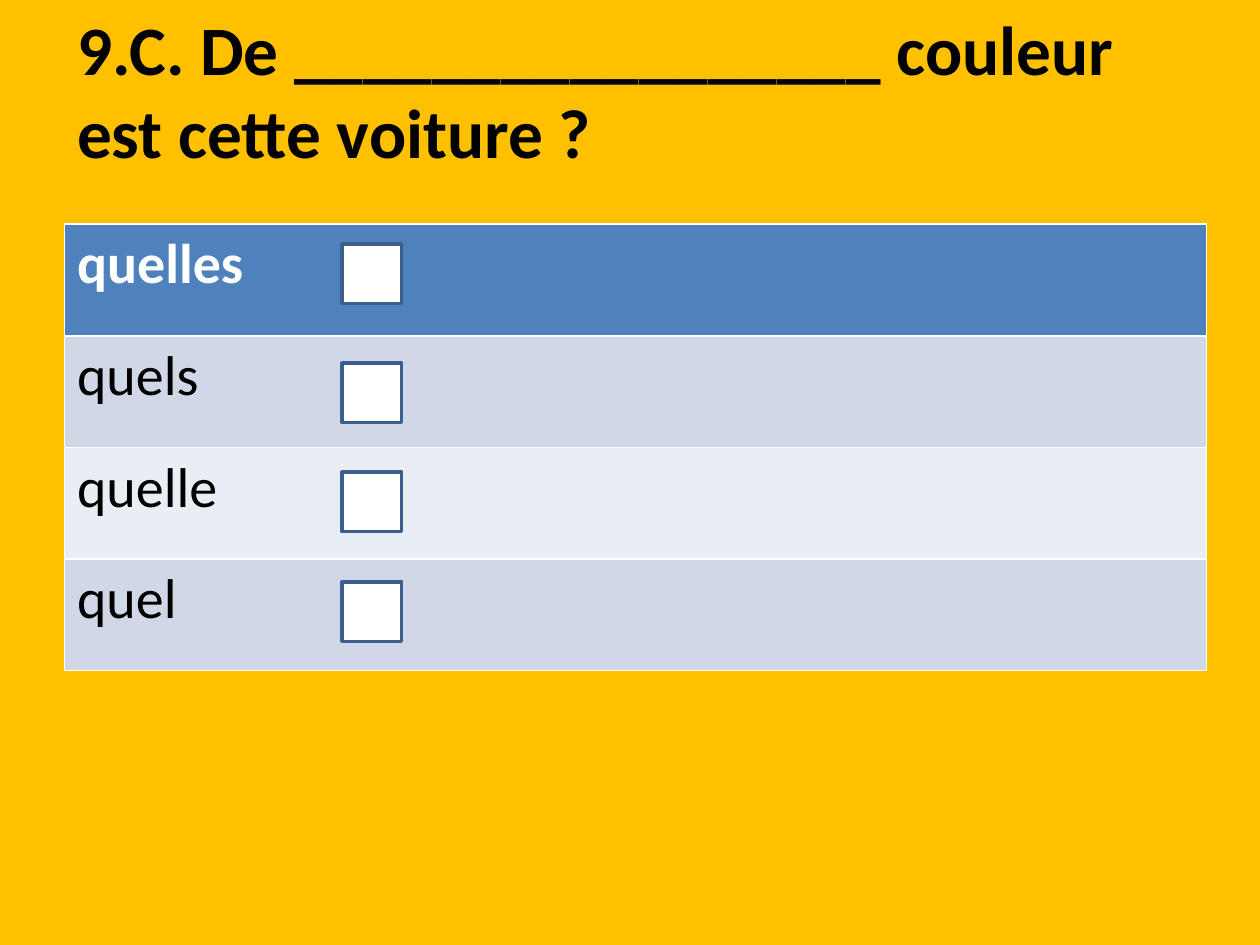
from pptx import Presentation
from pptx.dml.color import RGBColor
from pptx.enum.shapes import MSO_SHAPE
from pptx.enum.text import MSO_ANCHOR, MSO_AUTO_SIZE, PP_ALIGN
from pptx.util import Cm, Pt

RECTANGLE = MSO_SHAPE.RECTANGLE
MIDDLE = MSO_ANCHOR.MIDDLE
NO_AUTOFIT = MSO_AUTO_SIZE.NONE
LEFT = PP_ALIGN.LEFT

AMBER = RGBColor(0xFF, 0xC0, 0x00)
BLACK = RGBColor(0x00, 0x00, 0x00)
WHITE = RGBColor(0xFF, 0xFF, 0xFF)
HEADER_BLUE = RGBColor(0x4F, 0x81, 0xBD)
DARK_BAND = RGBColor(0xD0, 0xD8, 0xE8)
LIGHT_BAND = RGBColor(0xE9, 0xED, 0xF4)
BOX_BORDER = RGBColor(0x3A, 0x5F, 0x8C)


def format_font(font, color, **values):
    font.color.rgb = color
    for name, value in values.items():
        setattr(font, name, value)


presentation = Presentation()
presentation.slide_width = Cm(25.4)
presentation.slide_height = Cm(19.05)
slide = presentation.slides.add_slide(presentation.slide_layouts[5])
slide.background.fill.solid()
slide.background.fill.fore_color.rgb = AMBER

title = slide.shapes.title
title_place = {"left": Cm(1.3), "top": Cm(0.74), "width": Cm(22.86), "height": Cm(3.78)}
for name, value in title_place.items():
    setattr(title, name, value)
title_frame = title.text_frame
title_frame.text = "9.C. De _________________ couleur est cette voiture ?"
frame_format = {
    "word_wrap": True,
    "auto_size": NO_AUTOFIT,
    "vertical_anchor": MIDDLE,
    "margin_bottom": Cm(1.8),
}
for name, value in frame_format.items():
    setattr(title_frame, name, value)
title_paragraph = title_frame.paragraphs[0]
title_paragraph.alignment = LEFT
format_font(title_paragraph.runs[0].font, BLACK, name="Calibri", size=Pt(39.6), bold=True)

answers = [
    ("quelles", HEADER_BLUE, WHITE, True),
    ("quels", DARK_BAND, BLACK, False),
    ("quelle", LIGHT_BAND, BLACK, False),
    ("quel", DARK_BAND, BLACK, False),
]
row_height = Cm(2.25)
table = slide.shapes.add_table(
    len(answers), 1, Cm(1.3), Cm(4.52), Cm(23.02), row_height * len(answers)
).table
for row, (answer, fill_color, text_color, bold) in enumerate(answers):
    table.rows[row].height = row_height
    cell = table.cell(row, 0)
    cell.fill.solid()
    cell.fill.fore_color.rgb = fill_color
    cell.text = answer
    font = cell.text_frame.paragraphs[0].runs[0].font
    format_font(font, text_color, name="Calibri", size=Pt(32), bold=bold)

box_size = Cm(1.2)
for box_top in (4.92, 7.32, 9.52, 11.73):
    checkbox = slide.shapes.add_shape(RECTANGLE, Cm(6.9), Cm(box_top), box_size, box_size)
    checkbox.shadow.inherit = False
    checkbox.fill.solid()
    checkbox.fill.fore_color.rgb = WHITE
    checkbox.line.color.rgb = BOX_BORDER
    checkbox.line.width = Pt(2)

presentation.save("out.pptx")
